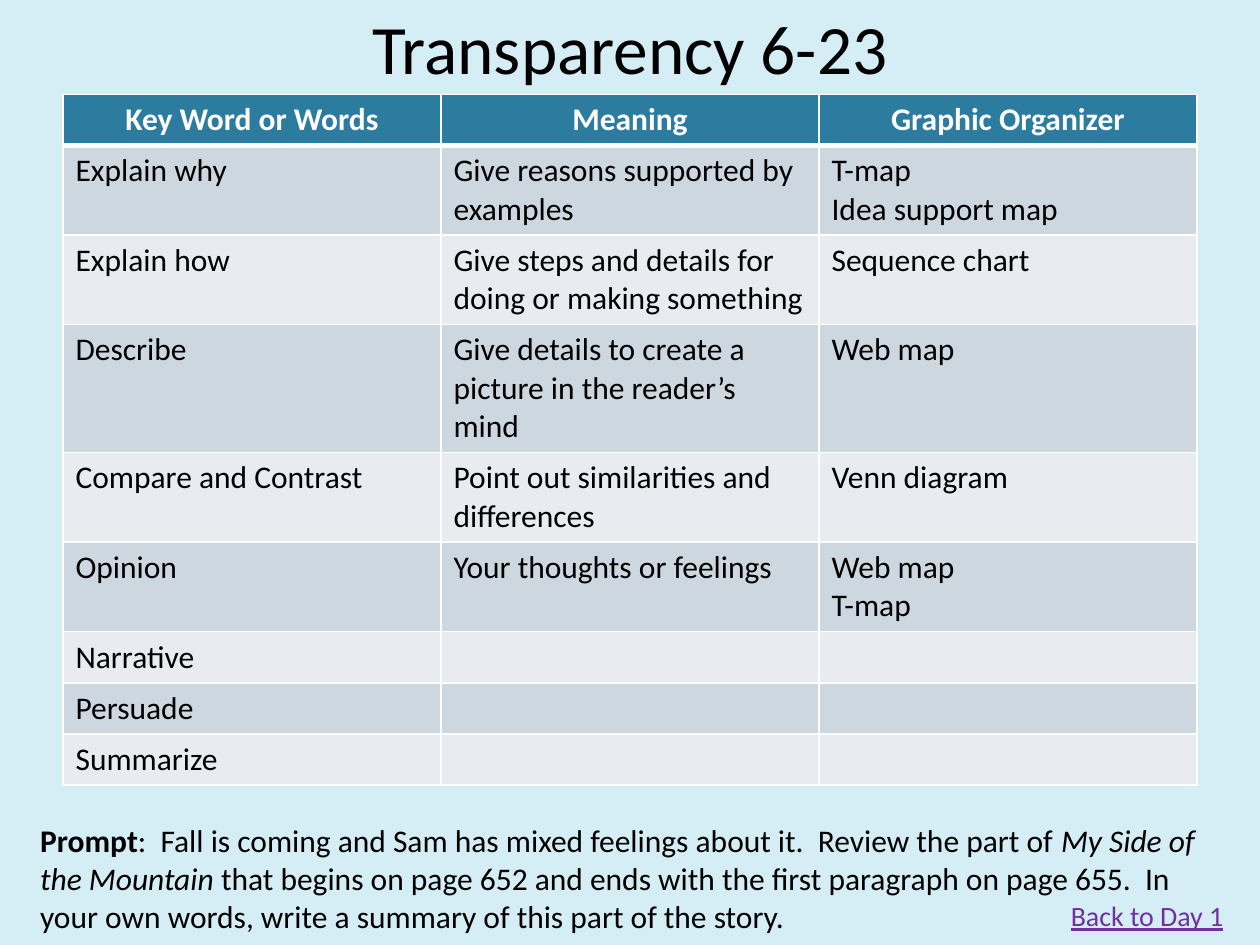
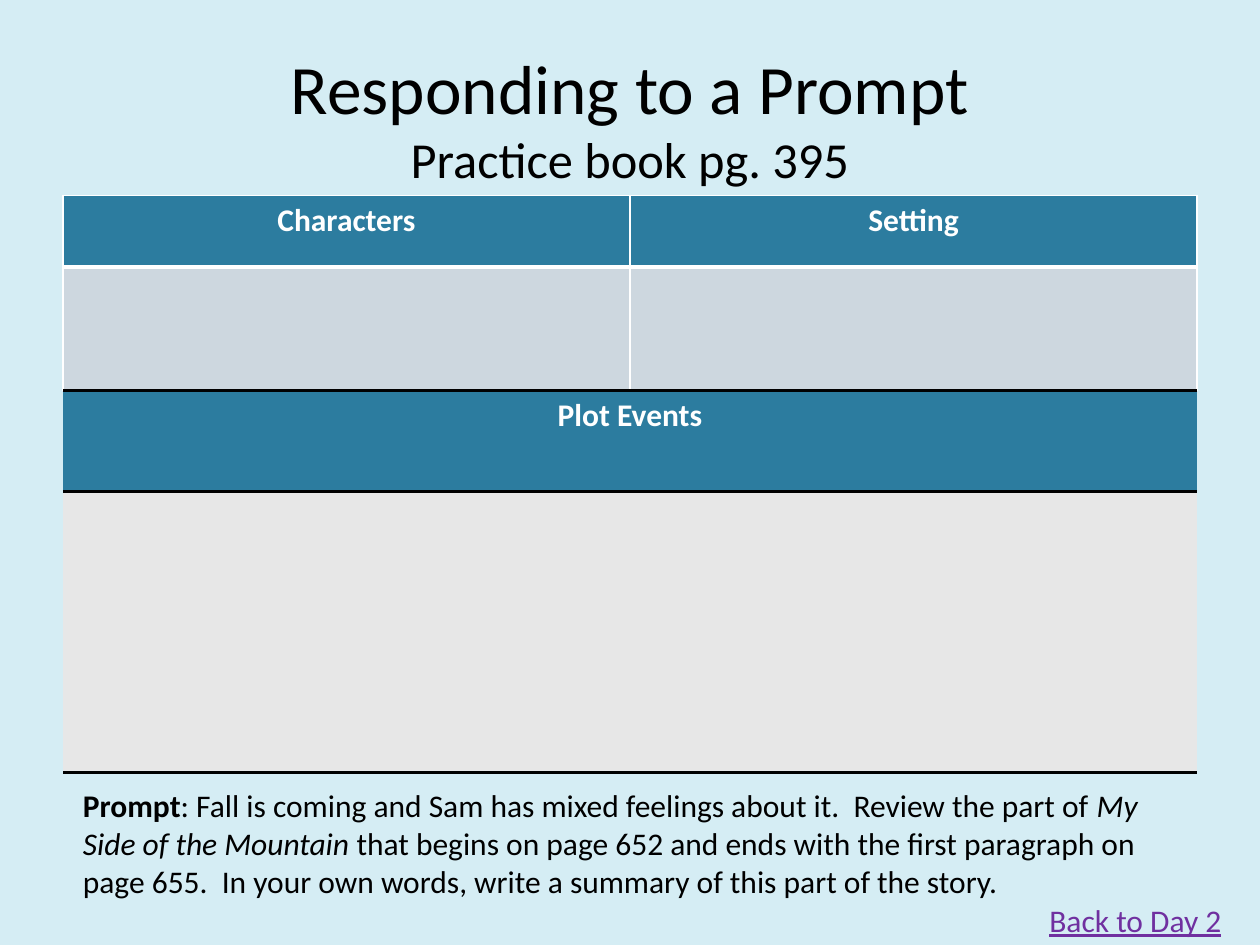
"""Build two slides on choosing graphic organizers and responding to a prompt."""
from lxml import etree
from pptx import Presentation
from pptx.dml.color import RGBColor
from pptx.enum.text import MSO_ANCHOR, MSO_AUTO_SIZE, PP_ALIGN
from pptx.oxml.ns import qn
from pptx.util import Inches, Pt

PALE_BLUE = RGBColor(0xD5, 0xED, 0xF4)
TEAL = RGBColor(0x2C, 0x7C, 0x9F)
BAND_DARK = RGBColor(0xCD, 0xD7, 0xDF)
BAND_LIGHT = RGBColor(0xE8, 0xEC, 0xF0)
GRAY = RGBColor(0xE7, 0xE7, 0xE7)
PURPLE = RGBColor(0x70, 0x30, 0xA0)
BLACK = RGBColor(0, 0, 0)
WHITE = RGBColor(0xFF, 0xFF, 0xFF)
FONT = "Calibri"

WHITE_GRID = dict.fromkeys("LRTB", (WHITE, 1))
HEADER_GRID = {**WHITE_GRID, "B": (WHITE, 3)}
BLACK_RULES = {"L": None, "R": None, "T": (BLACK, 2), "B": (BLACK, 2)}


def add_run(p, text, size=18, color=BLACK, **formats):
    r = p.add_run()
    r.text = text
    values = {"name": FONT, "size": Pt(size), **formats}
    for name, value in values.items():
        setattr(r.font, name, value)
    r.font.color.rgb = color


def add_grid(s, top, rows, heights, bands, header_edges, body_edges):
    cols = len(rows[0])
    table = s.shapes.add_table(len(rows), cols, Inches(0.5), Inches(top),
                               Inches(9), Inches(sum(heights))).table
    for i, row in enumerate(rows):
        table.rows[i].height = Inches(heights[i])
        for j, text in enumerate(row):
            cell = table.cell(i, j)
            cell.fill.solid()
            cell.fill.fore_color.rgb = bands[(i - 1) % len(bands)] if i else TEAL
            tf = cell.text_frame
            for k, line in enumerate(text.split("\n") if text else []):
                p = tf.add_paragraph() if k else tf.paragraphs[0]
                p.alignment = PP_ALIGN.LEFT if i else PP_ALIGN.CENTER
                add_run(p, line, color=BLACK if i else WHITE, bold=not i)
            edges = body_edges if i else header_edges
            tc_pr = cell._tc.get_or_add_tcPr()
            for k, (side, edge) in enumerate(edges.items()):
                ln = etree.Element(qn(f"a:ln{side}"))
                if edge:
                    color, width = edge
                    ln.set("w", str(Pt(width)))
                    fill = etree.SubElement(ln, qn("a:solidFill"))
                    etree.SubElement(fill, qn("a:srgbClr"), val=str(color))
                else:
                    etree.SubElement(ln, qn("a:noFill"))
                tc_pr.insert(k, ln)


prs = Presentation()
prs.slide_width, prs.slide_height = Inches(10), Inches(7.5)
bg = prs.slide_master.background.fill
bg.solid()
bg.fore_color.rgb = PALE_BLUE

pages = [
    {"title": [("Transparency 6-23", 39.6)], "title_box": (0.5, 0, 9, 0.75),
     "lead": ":  ", "prompt_box": (0.22, 6.47, 9.52, 1.01),
     "back": "Back to Day 1", "back_size": 16, "back_box": (8.4, 7.08, 1.6, 0.37)},
    {"title": [("Responding to a Prompt", 39.6), ("Practice book pg. 395", 28.8)],
     "title_box": (0.5, 0.3, 9, 1.25),
     "lead": ": ", "prompt_box": (0.56, 6.19, 8.94, 1.31),
     "back": "Back to Day 2", "back_size": 18, "back_box": (8.23, 7.1, 1.77, 0.4)},
]

organizers = [
    ("Key Word or Words", "Meaning", "Graphic Organizer"),
    ("Explain why", "Give reasons supported by examples", "T-map\nIdea support map"),
    ("Explain how", "Give steps and details for doing or making something",
     "Sequence chart"),
    ("Describe", "Give details to create a picture in the reader’s mind", "Web map"),
    ("Compare and Contrast", "Point out similarities and differences", "Venn diagram"),
    ("Opinion", "Your thoughts or feelings", "Web map\nT-map"),
    ("Narrative", "", ""),
    ("Persuade", "", ""),
    ("Summarize", "", ""),
]

for page in pages:
    s = prs.slides.add_slide(prs.slide_layouts[5])
    title = s.shapes.title
    title.left, title.top, title.width, title.height = map(Inches, page["title_box"])
    tf = title.text_frame
    tf.auto_size = MSO_AUTO_SIZE.NONE
    tf.vertical_anchor = MSO_ANCHOR.MIDDLE
    p = tf.paragraphs[0]
    p.alignment = PP_ALIGN.CENTER
    for i, (text, size) in enumerate(page["title"]):
        if i:
            p.add_line_break()
        add_run(p, text, size)

    if page is pages[0]:
        add_grid(s, 0.75, organizers, [0.4] * len(organizers),
                 [BAND_DARK, BAND_LIGHT], HEADER_GRID, WHITE_GRID)
    else:
        add_grid(s, 1.55, [("Characters", "Setting"), ("", "")], [0.57, 0.98],
                 [BAND_DARK], HEADER_GRID, WHITE_GRID)
        add_grid(s, 3.1, [("Plot Events",), ("",)], [0.8, 2.23],
                 [GRAY], BLACK_RULES, BLACK_RULES)

    tf = s.shapes.add_textbox(*map(Inches, page["prompt_box"])).text_frame
    tf.word_wrap = True
    p = tf.paragraphs[0]
    add_run(p, "Prompt", bold=True)
    add_run(p, page["lead"] + "Fall is coming and Sam has mixed feelings about it.  "
            "Review the part of ")
    add_run(p, "My Side of the Mountain", italic=True)
    add_run(p, " that begins on page 652 and ends with the first paragraph on page 655.  "
            "In your own words, write a summary of this part of the story.")

    tf = s.shapes.add_textbox(*map(Inches, page["back_box"])).text_frame
    tf.word_wrap = False
    add_run(tf.paragraphs[0], page["back"], page["back_size"], PURPLE, underline=True)

prs.save("out.pptx")
